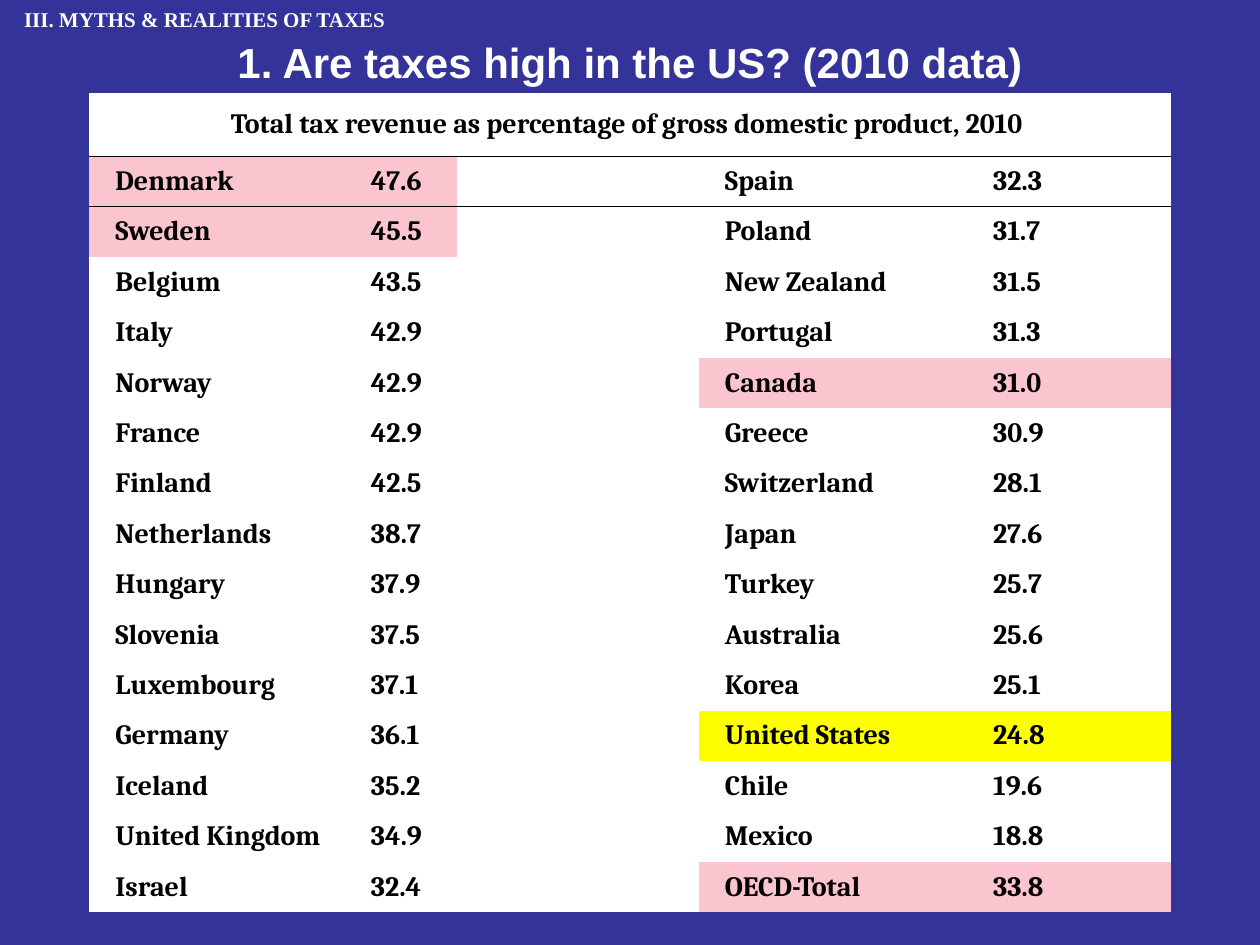
from dataclasses import dataclass

from lxml.etree import SubElement
from pptx import Presentation
from pptx.dml.color import RGBColor
from pptx.enum.shapes import MSO_SHAPE
from pptx.enum.text import MSO_ANCHOR, MSO_AUTO_SIZE, PP_ALIGN
from pptx.oxml.ns import qn
from pptx.util import Pt

COLORS = {
    "blue": "333399",
    "white": "FFFFFF",
    "black": "000000",
    "pink": "FBC5CF",
    "yellow": "FFFF00",
}
PLAIN = "{2D5ABB26-0587-4C30-8999-92F81FD0307C}"
WIDTHS = (156, 54, 138.25, 163.25, 106.5)
HEAD, ROW = 36, 28.8


@dataclass
class Rate:
    land: str
    share: str
    fill: str = "white"


LEFT = [
    Rate("Denmark", "47.6", "pink"),
    Rate("Sweden", "45.5", "pink"),
    Rate("Belgium", "43.5"),
    Rate("Italy", "42.9"),
    Rate("Norway", "42.9"),
    Rate("France", "42.9"),
    Rate("Finland", "42.5"),
    Rate("Netherlands", "38.7"),
    Rate("Hungary", "37.9"),
    Rate("Slovenia", "37.5"),
    Rate("Luxembourg", "37.1"),
    Rate("Germany", "36.1"),
    Rate("Iceland", "35.2"),
    Rate("United Kingdom", "34.9"),
    Rate("Israel", "32.4"),
]
RIGHT = [
    Rate("Spain", "32.3"),
    Rate("Poland", "31.7"),
    Rate("New Zealand", "31.5"),
    Rate("Portugal", "31.3"),
    Rate("Canada", "31.0", "pink"),
    Rate("Greece", "30.9"),
    Rate("Switzerland", "28.1"),
    Rate("Japan", "27.6"),
    Rate("Turkey", "25.7"),
    Rate("Australia", "25.6"),
    Rate("Korea", "25.1"),
    Rate("United States", "24.8", "yellow"),
    Rate("Chile", "19.6"),
    Rate("Mexico", "18.8"),
    Rate("OECD-Total", "33.8", "pink"),
]


def color(name: str) -> RGBColor:
    return RGBColor.from_string(COLORS[name])


def paint(fill, name: str) -> None:
    fill.solid()
    fill.fore_color.rgb = color(name)


def write(frame, text: str, *, size: float = 16, font: str = "Cambria",
          ink: str = "black", align=PP_ALIGN.LEFT, indent: float = 0) -> None:
    para = frame.paragraphs[0]
    para.alignment = align
    if indent:
        para._p.get_or_add_pPr().set("indent", str(Pt(indent)))
    run = para.add_run()
    run.text = text
    run.font.size = Pt(size)
    run.font.name = font
    run.font.bold = True
    run.font.color.rgb = color(ink)


def rule(cell, side: str) -> None:
    line = SubElement(cell._tc.get_or_add_tcPr(), qn(f"a:{side}"), w=str(Pt(1)))
    fill = SubElement(line, qn("a:solidFill"))
    SubElement(fill, qn("a:srgbClr"), val=COLORS["black"])


def dress(cell, fill: str, side: str = "") -> None:
    if side:
        rule(cell, side)
    paint(cell.fill, fill)
    cell.vertical_anchor = MSO_ANCHOR.MIDDLE
    cell.margin_left = cell.margin_right = Pt(5)
    cell.margin_top = cell.margin_bottom = 0


def label(slide) -> None:
    box = slide.shapes.add_shape(MSO_SHAPE.RECTANGLE, 0, 0, Pt(234), Pt(21.6))
    box.shadow.inherit = False
    paint(box.fill, "blue")
    box.line.fill.background()
    box.text_frame.word_wrap = True
    write(box.text_frame, "III. MYTHS & REALITIES OF TAXES", size=12,
          font="Times New Roman", ink="white", align=PP_ALIGN.CENTER)


def title(slide) -> None:
    box = slide.shapes.title
    box.left, box.top, box.width, box.height = Pt(0), Pt(16.8), Pt(720), Pt(36.5)
    frame = box.text_frame
    frame.auto_size = MSO_AUTO_SIZE.NONE
    frame.vertical_anchor = MSO_ANCHOR.MIDDLE
    write(frame, "1. Are taxes high in the US? (2010 data)", size=24,
          font="Arial", ink="white", align=PP_ALIGN.CENTER)


def grid(slide) -> None:
    count = len(LEFT)
    frame = slide.shapes.add_table(count + 1, len(WIDTHS), Pt(51), Pt(53.3),
                                   Pt(sum(WIDTHS)), Pt(HEAD + count * ROW))
    frame.element.find(".//" + qn("a:tableStyleId")).text = PLAIN
    table = frame.table
    table.first_row = table.horz_banding = False
    for col, width in zip(table.columns, WIDTHS):
        col.width = Pt(width)
    for row in table.rows:
        row.height = Pt(ROW)
    table.rows[0].height = Pt(HEAD)

    for col in range(len(WIDTHS)):
        dress(table.cell(0, col), "white", "lnB")
    head = table.cell(0, 0)
    head.merge(table.cell(0, len(WIDTHS) - 1))
    write(head.text_frame,
          "Total tax revenue as percentage of gross domestic product, 2010 ",
          align=PP_ALIGN.CENTER)

    for num, pair in enumerate(zip(LEFT, RIGHT), 1):
        side = "lnT" if num == 1 else ""
        dress(table.cell(num, 2), "white", side)
        for rate, col in zip(pair, (0, 3)):
            name, share = table.cell(num, col), table.cell(num, col + 1)
            dress(name, rate.fill, side)
            dress(share, rate.fill, side)
            write(name.text_frame, rate.land, indent=10)
            write(share.text_frame, rate.share)


def main() -> None:
    deck = Presentation()
    deck.slide_width, deck.slide_height = Pt(720), Pt(540)
    slide = deck.slides.add_slide(deck.slide_layouts[5])
    paint(slide.background.fill, "blue")
    label(slide)
    title(slide)
    grid(slide)
    deck.save("out.pptx")


if __name__ == "__main__":
    main()
